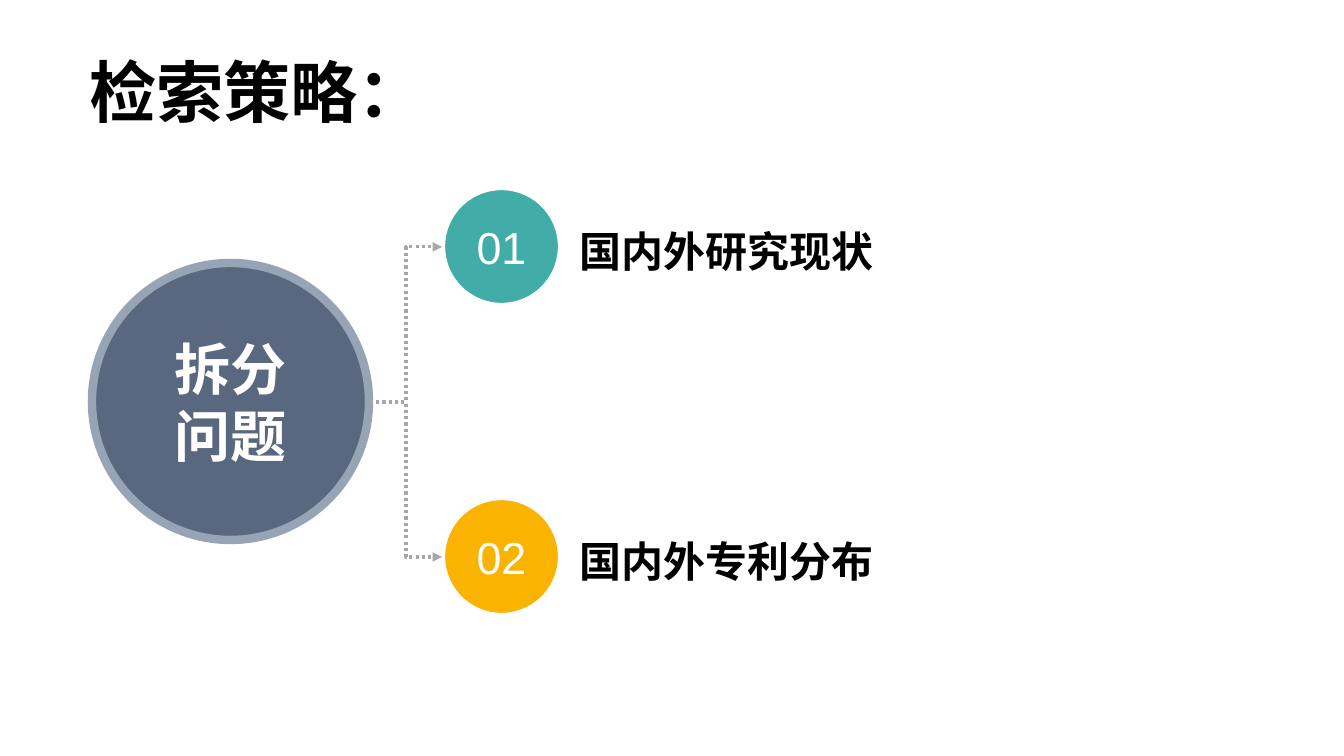
"""Build the search strategy slide: one question split into two numbered topics."""
from lxml import etree
from pptx import Presentation
from pptx.dml.color import RGBColor
from pptx.enum.dml import MSO_LINE
from pptx.enum.shapes import MSO_CONNECTOR, MSO_SHAPE
from pptx.enum.text import MSO_ANCHOR, MSO_AUTO_SIZE, PP_ALIGN
from pptx.oxml.ns import qn
from pptx.util import Pt

PX = 914400 / 100.8
ELBOW = MSO_CONNECTOR.ELBOW
OVAL = MSO_SHAPE.OVAL
DOTTED = MSO_LINE.ROUND_DOT
TOP, MIDDLE = MSO_ANCHOR.TOP, MSO_ANCHOR.MIDDLE
LEFT, CENTER = PP_ALIGN.LEFT, PP_ALIGN.CENTER
GROW = MSO_AUTO_SIZE.SHAPE_TO_FIT_TEXT

HAN = "Noto Sans CJK SC"
COLORS = {
    "white": "FFFFFF",
    "black": "000000",
    "slate": "59687F",
    "rim": "97A4B6",
    "teal": "42ACA8",
    "amber": "FAB301",
    "arrow": "A6A6A6",
}
TOPICS = [
    ("01", "国内外研究现状", "teal"),
    ("02", "国内外专利分布", "amber"),
]
TOPIC_TOP, TOPIC_STEP = 187, 310
BADGE_LEFT, BADGE_SIZE = 442, 119
HUB_LEFT, HUB_TOP, HUB_SIZE = 92, 263, 277


def write(shape, lines, font, size, color, bold, align, anchor):
    frame = shape.text_frame
    frame.word_wrap = True
    frame.vertical_anchor = anchor
    for index, line in enumerate(lines):
        paragraph = frame.add_paragraph() if index else frame.paragraphs[0]
        paragraph.alignment = align
        run = paragraph.add_run()
        run.text = line
        run.font.name = font
        run.font.size = Pt(size)
        run.font.bold = bold
        run.font.color.rgb = RGBColor.from_string(COLORS[color])
        east_asian = etree.SubElement(run.font._element, qn("a:ea"))
        east_asian.set("typeface", font)
    return frame


def add_circle(left, top, size, fill, rim, rim_width):
    circle = slide.shapes.add_shape(
        OVAL, *(round(v * PX) for v in (left, top, size, size)))
    circle.shadow.inherit = False
    circle.fill.solid()
    circle.fill.fore_color.rgb = RGBColor.from_string(COLORS[fill])
    circle.line.color.rgb = RGBColor.from_string(COLORS[rim])
    circle.line.width = Pt(rim_width)
    return circle


deck = Presentation()
deck.slide_width, deck.slide_height = round(1344 * PX), round(756 * PX)
slide = deck.slides.add_slide(deck.slide_layouts[5])

title = slide.shapes.title
title.left, title.top, title.width, title.height = (
    round(v * PX) for v in (79, 45, 413, 92))
title_frame = write(title, ["检索策略："], HAN, 48, "black", True, LEFT, TOP)
title_frame.auto_size = GROW

hub = add_circle(HUB_LEFT, HUB_TOP, HUB_SIZE, "slate", "rim", 6)
write(hub, ["拆分", "问题"], HAN, 40, "white", True, CENTER, MIDDLE)

for row, (number, topic, color) in enumerate(TOPICS):
    top = TOPIC_TOP + row * TOPIC_STEP

    badge = add_circle(BADGE_LEFT, top, BADGE_SIZE, color, "white", 4.5)
    write(badge, [number], "Arial", 32, "white", False, CENTER, MIDDLE)

    label = slide.shapes.add_textbox(
        *(round(v * PX) for v in (580, top, 519, 102)))
    label_frame = write(label, [topic], HAN, 30, "black", True, LEFT, MIDDLE)
    label_frame.margin_left = label_frame.margin_right = 0
    label_frame.paragraphs[0].line_spacing = 1.5

    branch = slide.shapes.add_connector(
        ELBOW,
        *(round(v * PX) for v in (HUB_LEFT + HUB_SIZE + 1, HUB_TOP + HUB_SIZE // 2 + 1,
                                  BADGE_LEFT, top + BADGE_SIZE // 2 + 1)))
    branch.line.color.rgb = RGBColor.from_string(COLORS["arrow"])
    branch.line.width = Pt(2.25)
    branch.line.dash_style = DOTTED
    etree.SubElement(branch.line._get_or_add_ln(), qn("a:tailEnd")).set("type", "triangle")
    etree.SubElement(branch._element.spPr, qn("a:effectLst"))

deck.save("out.pptx")
